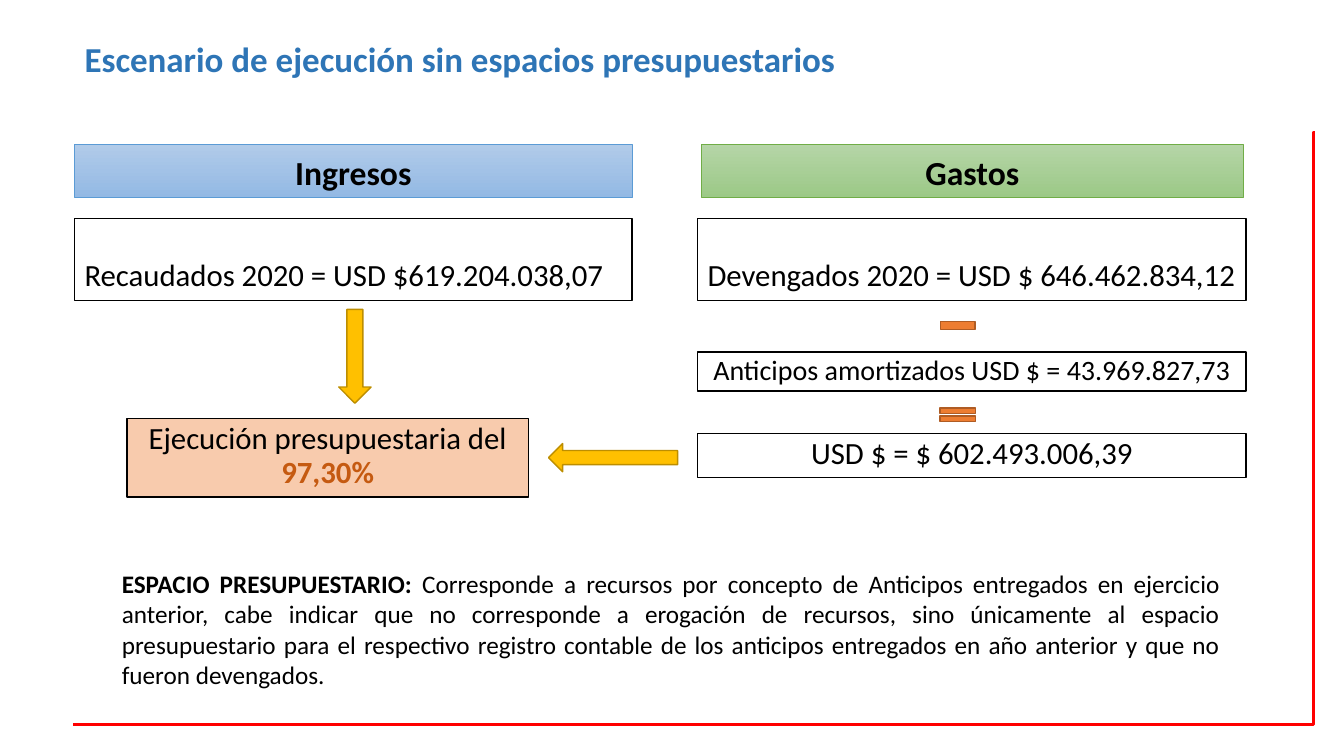
from lxml import etree
from pptx import Presentation
from pptx.dml.color import RGBColor
from pptx.enum.shapes import MSO_CONNECTOR, MSO_SHAPE
from pptx.enum.text import MSO_ANCHOR, PP_ALIGN
from pptx.oxml.ns import qn
from pptx.util import Inches, Pt

RECT, DOWN, BACK = MSO_SHAPE.RECTANGLE, MSO_SHAPE.DOWN_ARROW, MSO_SHAPE.LEFT_ARROW
MINUS, EQUAL = MSO_SHAPE.MATH_MINUS, MSO_SHAPE.MATH_EQUAL
ELBOW = MSO_CONNECTOR.ELBOW
TOP, LOW = MSO_ANCHOR.TOP, MSO_ANCHOR.BOTTOM
MID, JUST = PP_ALIGN.CENTER, PP_ALIGN.JUSTIFY

BLACK = RGBColor(0x00, 0x00, 0x00)
WHITE = RGBColor(0xFF, 0xFF, 0xFF)
RED = RGBColor(0xFF, 0x00, 0x00)
TITLE = RGBColor(0x2E, 0x75, 0xB6)
RUST = RGBColor(0xC5, 0x5A, 0x11)
PEACH = RGBColor(0xF8, 0xCB, 0xAD)
ORANGE = RGBColor(0xED, 0x7D, 0x31)
UMBER = RGBColor(0xAF, 0x5C, 0x24)
GOLD = RGBColor(0xFF, 0xC0, 0x00)
OCHRE = RGBColor(0xBD, 0x8E, 0x00)
BLUES = RGBColor(0xB1, 0xCB, 0xE9), RGBColor(0x93, 0xB9, 0xE4)
BLUE = RGBColor(0x5B, 0x9B, 0xD5)
GREENS = RGBColor(0xB5, 0xD5, 0xA7), RGBColor(0x9C, 0xC9, 0x87)
GREEN = RGBColor(0x70, 0xAD, 0x47)

# Columns are (left, width) and rows are (top, height), in inches
INCOME, SPEND, SPEND_HEAD = (0.74, 5.53), (6.92, 5.44), (6.96, 5.37)
HEAD, TOTAL, ADVANCE, NET = (1.43, 0.53), (2.17, 0.81), (3.49, 0.39), (4.3, 0.44)
RESULT = (1.26, 3.98), (4.15, 0.78)


def place(col, row):
    return [Inches(n) for n in (col[0], row[0], col[1], row[1])]


def write(shape, *runs, size=22, align=MID, anchor=TOP, space=0.9, right=0.1, base=0.05):
    """Each run is (text, colour, bold)."""
    frame = shape.text_frame
    frame.word_wrap = True
    frame.vertical_anchor = anchor
    frame.margin_right, frame.margin_bottom = Inches(right), Inches(base)
    para = frame.paragraphs[0]
    para.alignment, para.line_spacing = align, space
    for text, color, bold in runs:
        run = para.add_run()
        run.text = text
        font = run.font
        font.name, font.size, font.bold = "Calibri", Pt(size), bold
        font.color.rgb = color


def draw(slide, kind, col, row, fill, line, width=1):
    """A pair of colours as fill gives a gradient from top to bottom."""
    shape = slide.shapes.add_shape(kind, *place(col, row))
    shape.shadow.inherit = False
    if isinstance(fill, RGBColor):
        shape.fill.solid()
        shape.fill.fore_color.rgb = fill
    else:
        shape.fill.gradient()
        shape.fill.gradient_angle = 270
        for stop, color in zip(shape.fill.gradient_stops, fill):
            stop.color.rgb = color
    shape.line.color.rgb = line
    shape.line.width = Pt(width)
    return shape


def head(slide, col, text, fill, line):
    write(draw(slide, RECT, col, HEAD, fill, line, 0.5),
          (text, BLACK, True), size=24, anchor=LOW)


def box(slide, col, row, *runs, fill=WHITE, **form):
    write(draw(slide, RECT, col, row, fill, BLACK), *runs, **form)


def label(slide, col, row, *runs, **form):
    write(slide.shapes.add_textbox(*place(col, row)), *runs, align=JUST, **form)


def border(slide):
    ends = [Inches(n) for n in (13.04, 1.31, 0.72, 7.19)]
    line = slide.shapes.add_connector(ELBOW, *ends)
    line.line.color.rgb = RED
    line.line.width = Pt(1.75)
    props = line._element.spPr
    etree.SubElement(props, qn("a:effectLst"))
    # Turn the corner right beside the starting point
    guides = props.find(qn("a:prstGeom")).find(qn("a:avLst"))
    etree.SubElement(guides, qn("a:gd"), name="adj1", fmla="val 120")


def main():
    deck = Presentation()
    deck.slide_width, deck.slide_height = Inches(13.33), Inches(7.5)
    slide = deck.slides.add_slide(deck.slide_layouts[6])

    # Frame and title
    border(slide)
    label(slide, (0.74, 7.72), (0.34, 0.5),
          ("Escenario de ejecución sin espacios presupuestarios", TITLE, True),
          size=25, anchor=LOW)

    # Column heads and totals
    head(slide, INCOME, "Ingresos", BLUES, BLUE)
    head(slide, SPEND_HEAD, "Gastos", GREENS, GREEN)
    for col, text in ((INCOME, "Recaudados 2020 = USD $619.204.038,07"),
                      (SPEND, "Devengados 2020 = USD $ 646.462.834,12")):
        box(slide, col, TOTAL, (text, BLACK, False),
            align=JUST, anchor=LOW, right=0.02, base=0.07)

    # Subtraction and result
    box(slide, SPEND, ADVANCE,
        ("Anticipos amortizados USD $ = 43.969.827,73", BLACK, False), size=20)
    box(slide, SPEND, NET, ("USD $ = $ 602.493.006,39", BLACK, False))
    box(slide, *RESULT, ("Ejecución presupuestaria del ", BLACK, False),
        ("97,30%", RUST, True), fill=PEACH)

    # Signs and arrows
    draw(slide, MINUS, (9.27, 0.46), (3.06, 0.34), ORANGE, UMBER)
    draw(slide, EQUAL, (9.26, 0.48), (4, 0.23), ORANGE, UMBER)
    draw(slide, DOWN, (3.36, 0.32), (3.07, 0.93), GOLD, OCHRE)
    draw(slide, BACK, (5.44, 1.28), (4.4, 0.28), GOLD, OCHRE)

    # Explanation
    label(slide, (1.11, 11.09), (5.59, 1.31),
          ("ESPACIO PRESUPUESTARIO: ", BLACK, True),
          ("Corresponde a recursos por concepto de Anticipos entregados en "
           "ejercicio anterior, cabe indicar que no corresponde a erogación de "
           "recursos, sino únicamente al espacio presupuestario para el "
           "respectivo registro contable de los anticipos entregados en año "
           "anterior y que no fueron devengados.", BLACK, False),
          size=18, space=1)

    deck.save("out.pptx")


if __name__ == "__main__":
    main()
